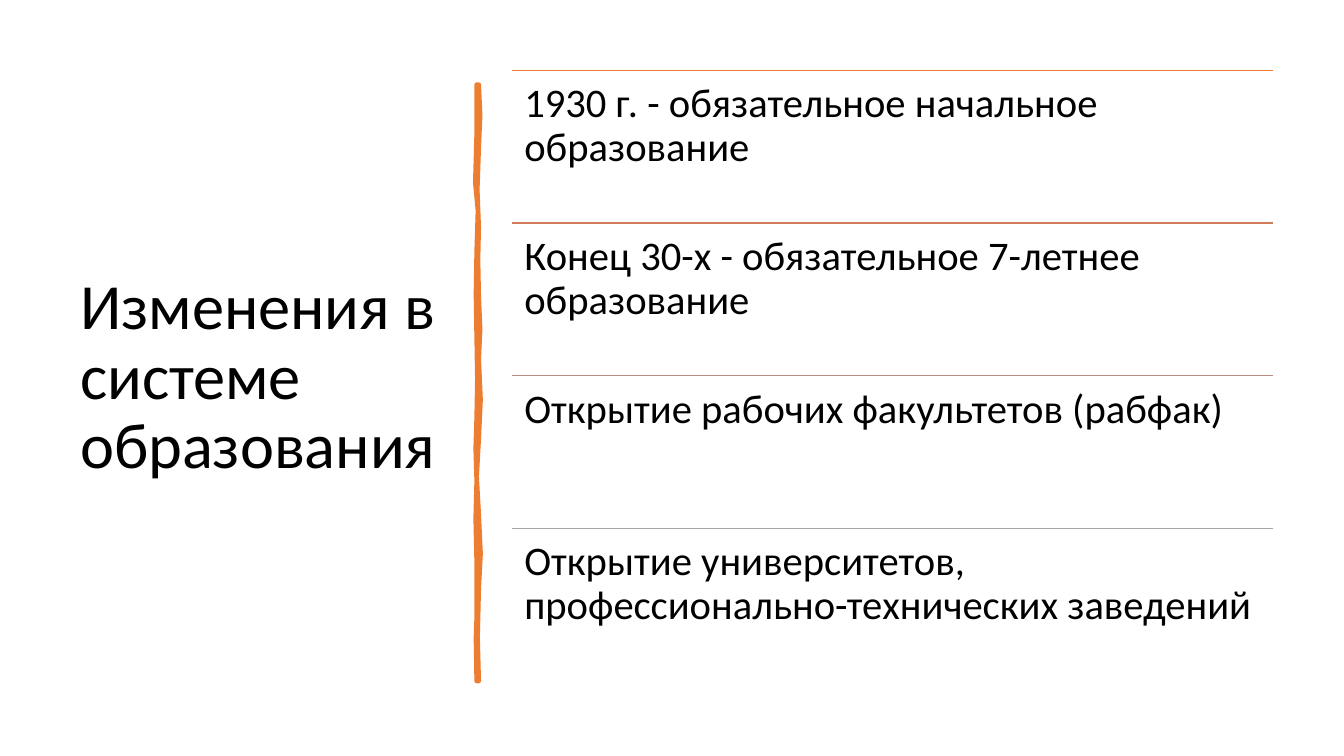
from pptx import Presentation
from pptx.dml.color import RGBColor
from pptx.enum.shapes import MSO_CONNECTOR
from pptx.enum.text import MSO_ANCHOR, MSO_AUTO_SIZE, PP_ALIGN
from pptx.util import Pt
from lxml.etree import SubElement
from pptx.oxml.ns import qn

COLORS = {"text": "000000", "accent": "ED7D31"}
FONT = "Calibri"

TITLE = "Изменения в системе образования"
CHANGES = [
    ("1930 г. - обязательное начальное образование", "ED7D31"),
    ("Конец 30-х - обязательное 7-летнее образование", "D17B5C"),
    ("Открытие рабочих факультетов (рабфак)", "B98A82"),
    ("Открытие университетов, профессионально-технических заведений", "A5A5A5"),
]

# Brush stroke edges as (x, y) inside its box, in points
RIGHT_EDGE = [(3, 0), (4, 22), (3, 45), (2, 75), (3, 102), (2.5, 125), (3, 151),
              (4, 175), (3, 196), (4.3, 225), (3, 253), (1.5, 280), (3, 307),
              (4.3, 335), (3, 360), (2.2, 395), (3, 426)]
LEFT_EDGE = [(1.5, 426), (1, 395), (1.5, 381), (1.5, 341), (0.8, 310), (1.5, 283),
             (0.8, 260), (1.5, 238), (2, 210), (1.5, 181), (1, 150), (1.5, 119),
             (2.4, 90), (0.5, 70), (1.5, 35), (1.5, 0)]


def rgb(value):
    return RGBColor.from_string(value)


def write_text(shape, text, size, insets, anchor):
    frame = shape.text_frame
    frame.text = text
    left, top, right, bottom = insets
    frame_format = {
        "word_wrap": True, "auto_size": MSO_AUTO_SIZE.NONE, "vertical_anchor": anchor,
        "margin_left": Pt(left), "margin_top": Pt(top),
        "margin_right": Pt(right), "margin_bottom": Pt(bottom),
    }
    for name, value in frame_format.items():
        setattr(frame, name, value)
    para = frame.paragraphs[0]
    para.alignment = PP_ALIGN.LEFT
    para.line_spacing = 0.9
    span = para.runs[0]
    for name, value in {"name": FONT, "size": Pt(size)}.items():
        setattr(span.font, name, value)
    span.font.color.rgb = rgb(COLORS["text"])


def place_title(page, left, top, width, height):
    title = page.shapes.title
    box = {"left": left, "top": top, "width": width, "height": height}
    for name, value in box.items():
        setattr(title, name, Pt(value))
    write_text(title, TITLE, 46, (7.2, 3.6, 0, 3.6), MSO_ANCHOR.MIDDLE)


def draw_brush_stroke(page, left, top):
    points = [(Pt(left + x), Pt(top + y)) for x, y in RIGHT_EDGE + LEFT_EDGE]
    builder = page.shapes.build_freeform(*points[0])
    builder.add_line_segments(points[1:], close=True)
    stroke = builder.convert_to_shape()
    stroke.shadow.inherit = False
    stroke.fill.solid()
    stroke.fill.fore_color.rgb = rgb(COLORS["accent"])
    stroke.line.color.rgb = rgb(COLORS["accent"])
    stroke.line.width = Pt(3.25)
    SubElement(stroke.line._get_or_add_ln(), qn("a:round"))


def draw_changes(page, left, top, width, height):
    row_height = height / len(CHANGES)
    for index, (text, color) in enumerate(CHANGES):
        row_top = top + index * row_height
        # Rule above the row
        rule = page.shapes.add_connector(
            MSO_CONNECTOR.STRAIGHT, Pt(left), Pt(row_top), Pt(left + width), Pt(row_top))
        rule.line.color.rgb = rgb(color)
        rule.line.width = Pt(1)
        SubElement(rule._element.spPr, qn("a:effectLst"))
        # Row text
        box = page.shapes.add_textbox(Pt(left), Pt(row_top), Pt(width), Pt(row_height))
        write_text(box, text, 29, (8.7,) * 4, MSO_ANCHOR.TOP)


def main():
    deck = Presentation()
    deck.slide_width, deck.slide_height = Pt(960), Pt(540)
    page = deck.slides.add_slide(deck.slide_layouts[5])
    place_title(page, 50, 50.4, 269, 440)
    draw_brush_stroke(page, 339, 60.5)
    draw_changes(page, 365.8, 50.4, 543.6, 436)
    deck.save("out.pptx")


if __name__ == "__main__":
    main()
